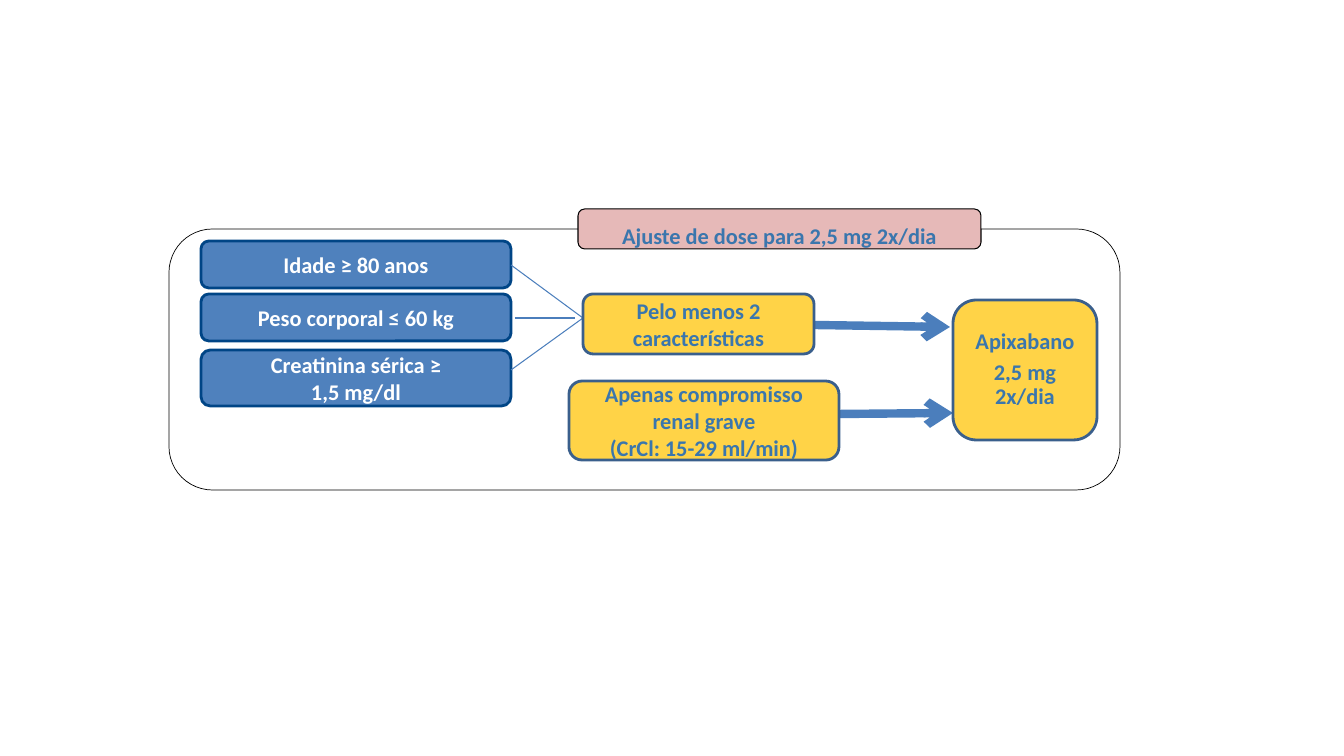
import dataclasses

import lxml.etree
import pptx
import pptx.dml.color
import pptx.enum.shapes
import pptx.enum.text
import pptx.oxml
import pptx.oxml.ns
import pptx.util

EMU_PER_PX = 914400 / 100.8


@dataclasses.dataclass(frozen=True)
class Theme:
    font: str = "Calibri"
    text_pt: int = 16
    box_line_pt: float = 2
    frame_line_pt: float = 0.5
    title_line_pt: float = 0.75
    link_pt: float = 0.75
    arrow_pt: float = 6
    blue: str = "4F81BD"
    blue_edge: str = "004586"
    yellow: str = "FFD347"
    yellow_edge: str = "3A5F8C"
    pink: str = "E6B9B8"
    black: str = "000000"
    white: str = "FFFFFF"
    ink: str = "3A76AD"
    connector: str = "4B7EBC"


THEME = Theme()


def px(length):
    return pptx.util.Emu(round(length * EMU_PER_PX))


def rgb(code):
    return pptx.dml.color.RGBColor.from_string(code)


def add_box(slide, box, fill, edge, edge_pt):
    """Rounded rectangle; a fill of None leaves it hollow."""
    panel = slide.shapes.add_shape(
        pptx.enum.shapes.MSO_SHAPE.ROUNDED_RECTANGLE, *map(px, box))
    panel.shadow.inherit = False
    if fill is None:
        panel.fill.background()
    else:
        panel.fill.solid()
        panel.fill.fore_color.rgb = rgb(fill)
    panel.line.color.rgb = rgb(edge)
    panel.line.width = pptx.util.Pt(edge_pt)
    return panel


def write(panel, paragraphs, color, spacing=None, gap_pt=0):
    """Centre bold paragraphs; a newline inside one becomes a line break."""
    frame = panel.text_frame
    frame.word_wrap = True
    frame.vertical_anchor = pptx.enum.text.MSO_ANCHOR.MIDDLE
    for index, wording in enumerate(paragraphs):
        paragraph = frame.add_paragraph() if index else frame.paragraphs[0]
        paragraph.alignment = pptx.enum.text.PP_ALIGN.CENTER
        if spacing:
            paragraph.line_spacing = spacing
        if index:
            paragraph.space_before = pptx.util.Pt(gap_pt)
        for row, line in enumerate(wording.split("\n")):
            if row:
                paragraph.add_line_break()
            run = paragraph.add_run()
            run.text = line
            run.font.name = THEME.font
            run.font.size = pptx.util.Pt(THEME.text_pt)
            run.font.bold = True
            run.font.color.rgb = rgb(color)


def add_link(slide, start, end, width_pt, arrow=False):
    link = slide.shapes.add_connector(
        pptx.enum.shapes.MSO_CONNECTOR.STRAIGHT, *map(px, start + end))
    link.line.color.rgb = rgb(THEME.connector)
    link.line.width = pptx.util.Pt(width_pt)
    if arrow:
        lxml.etree.SubElement(link.line._get_or_add_ln(),
                              pptx.oxml.ns.qn("a:tailEnd"), type="arrow")
    lxml.etree.SubElement(link._element.spPr, pptx.oxml.ns.qn("a:effectLst"))


def add_criteria(slide, left, top):
    """Stack of patient criteria, each linked to the condition on the right."""
    width, hub = 310, (left + 382, top + 77)
    criteria = [
        ("Idade ≥ 80 anos", 0, 47),
        ("Peso corporal ≤ 60 kg", 53, 47),
        ("Creatinina sérica ≥\n1,5 mg/dl", 109, 56),
    ]
    for wording, offset, height in criteria:
        panel = add_box(slide, (left, top + offset, width, height),
                        THEME.blue, THEME.blue_edge, THEME.box_line_pt)
        write(panel, [wording], THEME.white)
    add_link(slide, (left + width, top + 24), hub, THEME.link_pt)
    add_link(slide, (left + width + 4, hub[1]), (hub[0] - 8, hub[1]), THEME.link_pt)
    add_link(slide, (left + width, top + 129), hub, THEME.link_pt)


def add_conditions(slide, left, top):
    """Two conditions, each with an arrow to the resulting dose."""
    conditions = [
        ("Pelo menos 2 características", (14, 0, 231, 60), (245, 31), (381, 33)),
        ("Apenas compromisso\nrenal grave\n(CrCl: 15-29 ml/min)",
         (0, 87, 270, 79), (268, 120), (384, 119)),
    ]
    for wording, (x, y, width, height), start, end in conditions:
        add_link(slide, (left + start[0], top + start[1]),
                 (left + end[0], top + end[1]), THEME.arrow_pt, arrow=True)
        panel = add_box(slide, (left + x, top + y, width, height),
                        THEME.yellow, THEME.yellow_edge, THEME.box_line_pt)
        write(panel, [wording], THEME.ink)


def add_dose(slide, box):
    dose = add_box(slide, box, THEME.yellow, THEME.yellow_edge, THEME.box_line_pt)
    write(dose, ["Apixabano", "2,5 mg 2x/dia"], THEME.ink, spacing=0.9, gap_pt=5)


def add_title(slide, box):
    title = add_box(slide, box, THEME.pink, THEME.black, THEME.title_line_pt)
    text = title.text_frame
    text.margin_left = text.margin_right = text.margin_top = text.margin_bottom = 0
    write(title, ["Ajuste de dose para 2,5 mg 2x/dia"], THEME.ink, spacing=1.5)


def add_dose_adjustment(slide, left, top, width, height):
    add_box(slide, (left, top, width, height), None, THEME.black, THEME.frame_line_pt)
    add_criteria(slide, left + 32, top + 12)
    add_conditions(slide, left + 400, top + 65)
    add_title(slide, (left + 409, top - 20, 403, 40))
    add_dose(slide, (left + 784, top + 71, 144, 140))


def main():
    deck = pptx.Presentation()
    deck.slide_width, deck.slide_height = px(1344), px(756)
    slide = deck.slides.add_slide(deck.slide_layouts[6])
    add_dose_adjustment(slide, 169, 229, 951, 261)
    deck.save("out.pptx")


if __name__ == "__main__":
    main()
